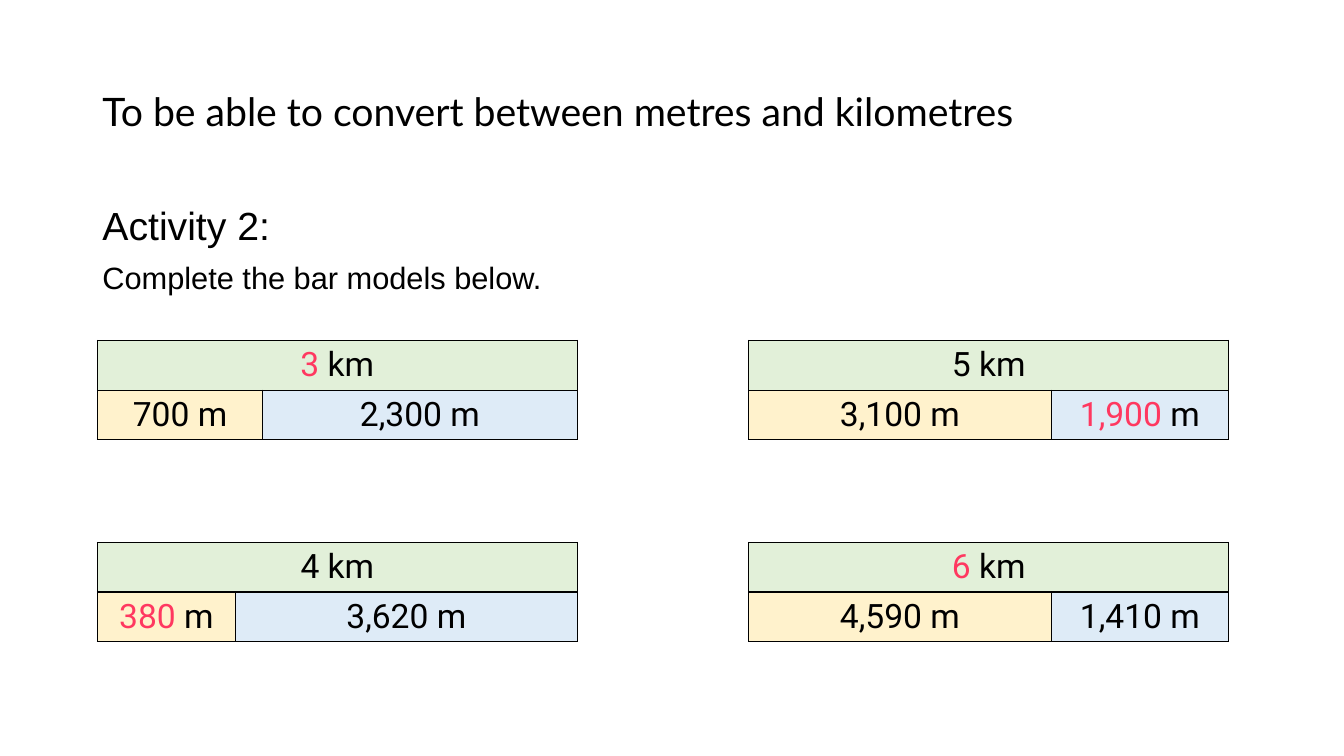
from dataclasses import dataclass

from lxml.etree import SubElement
from pptx import Presentation
from pptx.dml.color import RGBColor as RGB
from pptx.enum.text import MSO_ANCHOR as Anchor, MSO_AUTO_SIZE as AutoSize, PP_ALIGN as Align
from pptx.oxml.ns import qn
from pptx.util import Pt


@dataclass(frozen=True)
class Theme:
    ink: str = "000000"
    answer: str = "FF3860"
    whole: str = "E2F0D9"
    left_part: str = "FFF2CC"
    right_part: str = "DEEBF7"
    title_font: str = "Lato"
    body_font: str = "Arial"
    bar_font: str = "Roboto"
    heading: float = 28
    instruction: float = 22
    bar: float = 24


class Page:
    """Holds the theme and the current slide."""

    def __init__(self, s, theme):
        self.s, self.theme = s, theme

    def add_text(self, p, text, font, size, color=None):
        r = p.add_run()
        r.text = text
        r.font.color.rgb = RGB.from_string(color or self.theme.ink)
        for name, value in {"name": font, "size": Pt(size), "bold": False}.items():
            setattr(r.font, name, value)

    def place(self, sp, box, anchor):
        for name, value in zip(("left", "top", "width", "height"), box):
            setattr(sp, name, Pt(value))
        tf = sp.text_frame
        for name, value in {"word_wrap": True, "auto_size": AutoSize.NONE,
                            "vertical_anchor": anchor}.items():
            setattr(tf, name, value)
        return tf

    def fill_placeholder(self, sp, box, anchor, font, lines):
        tf = self.place(sp, box, anchor)
        for i, (text, size) in enumerate(lines):
            p = tf.add_paragraph() if i else tf.paragraphs[0]
            pPr = p._p.get_or_add_pPr()
            pPr.set("marL", "0")
            pPr.set("indent", "0")
            SubElement(pPr, qn("a:buNone"))
            for name, value in {"alignment": Align.LEFT, "line_spacing": 0.9,
                                "space_before": Pt(10 if i else 0)}.items():
                setattr(p, name, value)
            self.add_text(p, text, font, size)

    def cell(self, cell, fill, text=""):
        tcPr = cell._tc.get_or_add_tcPr()
        for side in ("a:lnL", "a:lnR", "a:lnT", "a:lnB"):
            ln = SubElement(tcPr, qn(side), w=str(Pt(1)))
            SubElement(SubElement(ln, qn("a:solidFill")), qn("a:srgbClr"), val=self.theme.ink)
        cell.fill.solid()
        cell.fill.fore_color.rgb = RGB.from_string(fill)
        p = cell.text_frame.paragraphs[0]
        p.alignment = Align.CENTER
        # Text between asterisks is an answer
        for i, part in enumerate(text.split("*")):
            if part:
                color = self.theme.answer if i % 2 else self.theme.ink
                self.add_text(p, part, self.theme.bar_font, self.theme.bar, color)

    def bar_model(self, left, top, width, row_height, split, whole, parts):
        t = self.theme
        table = self.s.shapes.add_table(2, 2, Pt(left), Pt(top), Pt(width),
                                        Pt(2 * row_height)).table
        table.first_row = table.horz_banding = False
        for column, w in zip(table.columns, (split, width - split)):
            column.width = Pt(w)
        table.cell(0, 0).merge(table.cell(0, 1))
        self.cell(table.cell(0, 0), t.whole, whole)
        self.cell(table.cell(0, 1), t.whole)
        for i, (fill, text) in enumerate(zip((t.left_part, t.right_part), parts)):
            self.cell(table.cell(1, i), fill, text)


def main():
    prs = Presentation()
    prs.slide_width, prs.slide_height = Pt(960), Pt(540)
    theme = Theme()
    s = prs.slides.add_slide(prs.slide_layouts[1])
    page = Page(s, theme)

    # Learning objective and instructions
    page.fill_placeholder(
        s.shapes.title, (66, 28.8, 691, 104.4), Anchor.MIDDLE, theme.title_font,
        [("To be able to convert between metres and kilometres", theme.heading)])
    page.fill_placeholder(
        s.placeholders[1], (66, 144, 828, 342.7), Anchor.TOP, theme.body_font,
        [("Activity 2:", theme.heading),
         ("Complete the bar models below.", theme.instruction)])

    # Bar models in a two by two grid: width of left part, whole, parts
    models = [
        (118, "*3* km", ("700 m", "2,300 m")),
        (216, "5 km", ("3,100 m", "*1,900* m")),
        (98.6, "4 km", ("*380* m", "3,620 m")),
        (216, "*6* km", ("4,590 m", "1,410 m")),
    ]
    for i, (split, whole, parts) in enumerate(models):
        row, col = divmod(i, 2)
        page.bar_model(69.6 + 465.2 * col, 243.2 + 144.2 * row, 342.8, 35.4,
                       split, whole, parts)

    prs.save("out.pptx")


if __name__ == "__main__":
    main()
